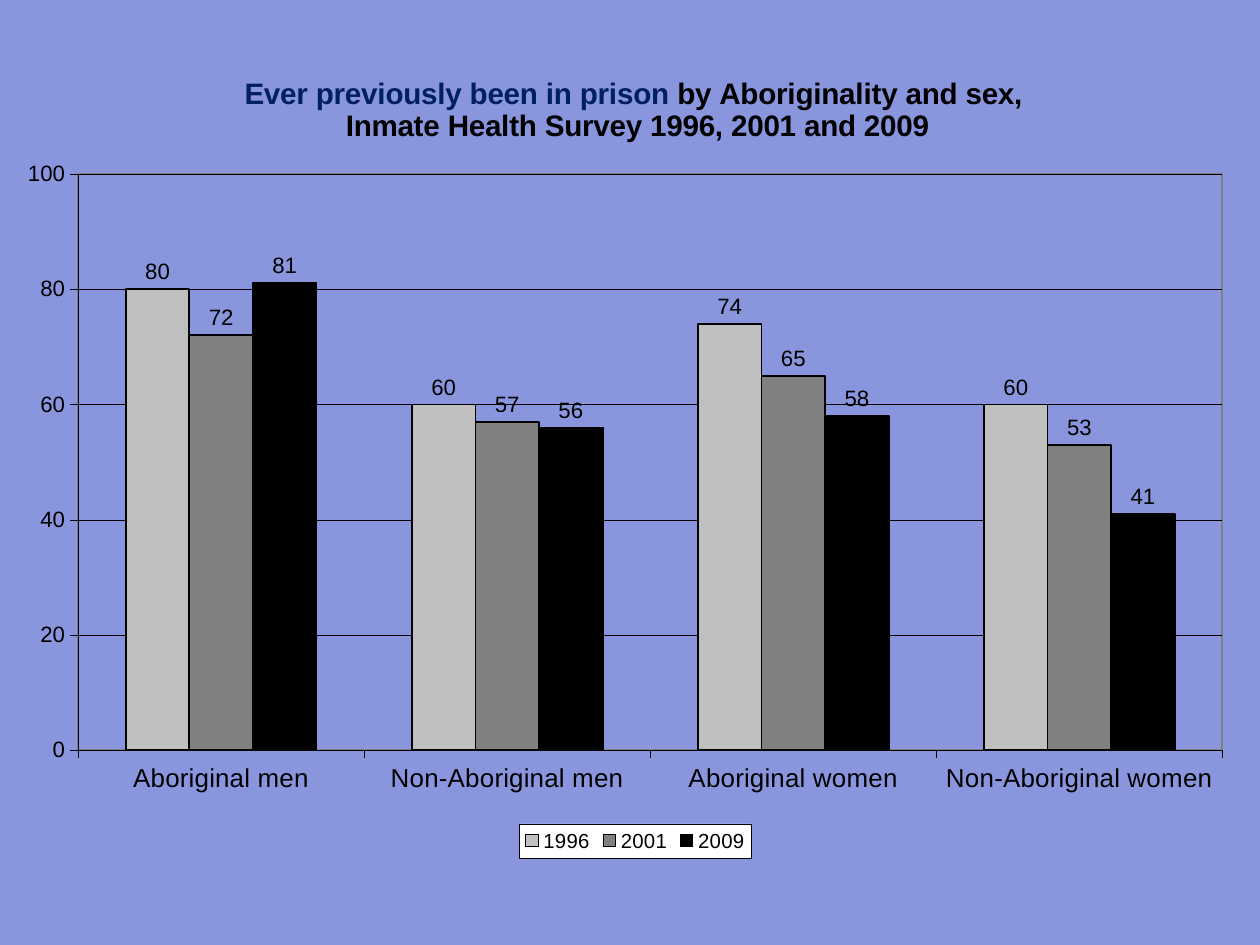
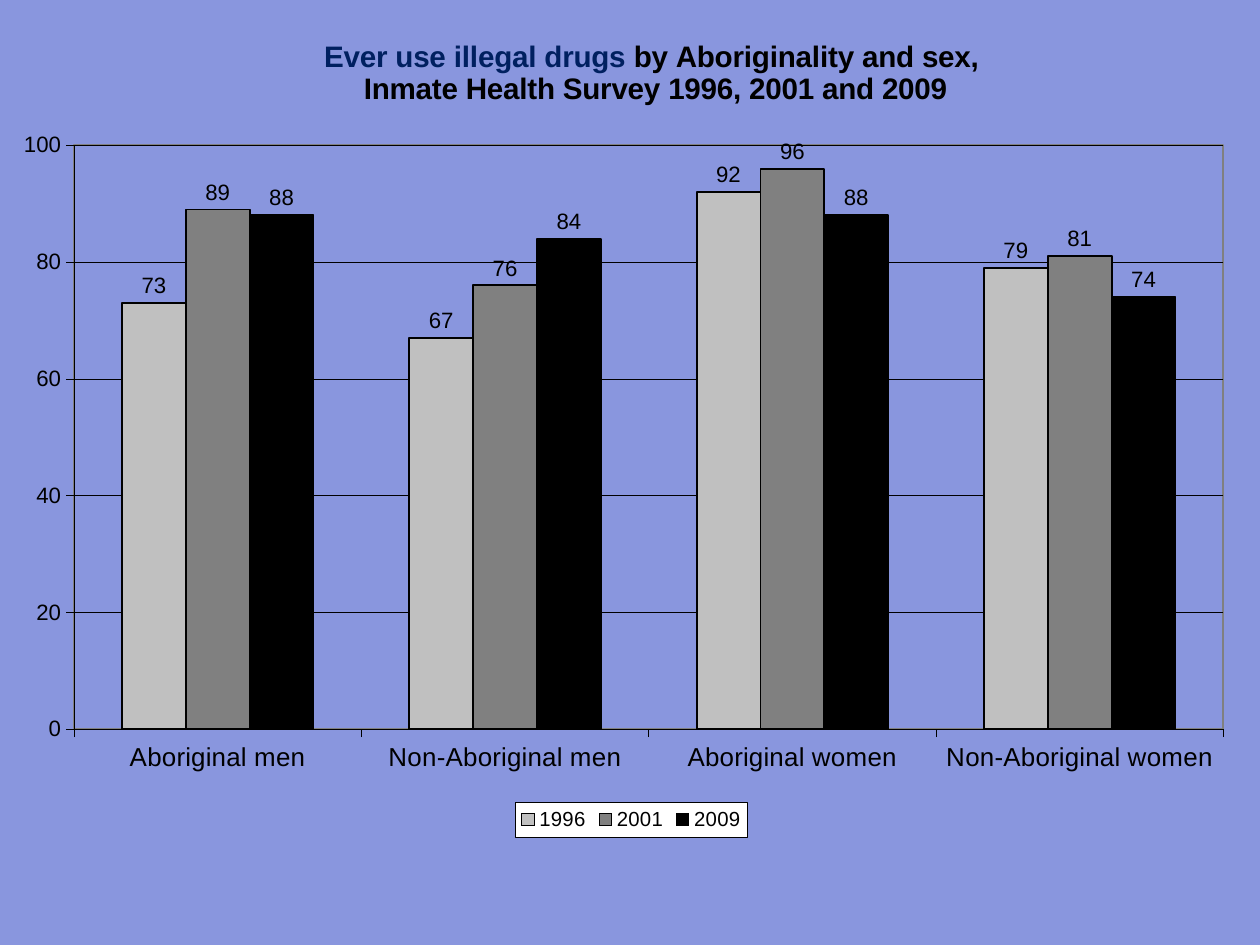
from lxml import etree
from pptx import Presentation
from pptx.chart.data import CategoryChartData
from pptx.dml.color import RGBColor
from pptx.enum.chart import XL_CHART_TYPE, XL_LABEL_POSITION, XL_LEGEND_POSITION, XL_TICK_MARK
from pptx.oxml import parse_xml
from pptx.oxml.ns import nsdecls, qn
from pptx.util import Inches, Pt

COLUMN = XL_CHART_TYPE.COLUMN_CLUSTERED
OUT_END = XL_LABEL_POSITION.OUTSIDE_END
BOTTOM = XL_LEGEND_POSITION.BOTTOM
TICK_OUT, TICK_NONE = XL_TICK_MARK.OUTSIDE, XL_TICK_MARK.NONE


class Theme:
    font = "Arial"
    back, ink, topic = "8996DE", "000000", "002060"
    frame, paper = "808080", "FFFFFF"
    bars = ["C0C0C0", "808080", "000000"]
    title, group, label, key = 16, 14, 12, 11
    thin, edge = 0.25, 1


def style(font, size, color=Theme.ink, bold=False):
    font.name, font.size, font.bold = Theme.font, Pt(size), bold
    font.color.rgb = RGBColor.from_string(color)


def place(prev, x, y, w=None, h=None, inner=False):
    """Put a manual layout, in percent of the chart, right after prev."""
    layout = parse_xml(f"<c:layout {nsdecls('c')}><c:manualLayout/></c:layout>")
    rows = [("layoutTarget", "inner")] if inner else []
    rows += [("xMode", "edge"), ("yMode", "edge")]
    rows += [(k, f"{v / 100:.4f}") for k, v in zip("xywh", (x, y, w, h)) if v is not None]
    for tag, val in rows:
        etree.SubElement(layout[0], qn("c:" + tag)).set("val", val)
    prev.addnext(layout)


years = ["1996", "2001", "2009"]
groups = ["Aboriginal men", "Non-Aboriginal men", "Aboriginal women", "Non-Aboriginal women"]
tail = " by Aboriginality and sex, "
survey = "Inmate Health Survey 1996, 2001 and 2009"

# Frames are percent of the slide; head and plot are percent of the chart
pages = [
    dict(topic="Ever previously been in prison", frame=(0.85, 4.51, 99.15, 86.32),
         head=(18.4, 3.5), plot=(5.4, 16.1, 91.6, 70.7),
         vals=[(80, 60, 74, 60), (72, 57, 65, 53), (81, 56, 58, 41)]),
    dict(topic="Ever use illegal drugs", frame=(0.53, 1.13, 99.15, 87.45),
         head=(25.1, 2.9), plot=(5.4, 16.3, 92, 70.7),
         vals=[(73, 67, 92, 79), (89, 76, 96, 81), (88, 84, 88, 74)]),
]

deck = Presentation()
deck.slide_width, deck.slide_height = Inches(9.45), Inches(7.09)
wide, high = deck.slide_width, deck.slide_height

for page in pages:
    slide = deck.slides.add_slide(deck.slide_layouts[6])
    slide.background.fill.solid()
    slide.background.fill.fore_color.rgb = RGBColor.from_string(Theme.back)

    # Chart and its data
    data = CategoryChartData()
    data.categories = groups
    for year, vals in zip(years, page["vals"]):
        data.add_series(year, vals)
    left, top, width, height = page["frame"]
    spot = [int(s * v / 100) for s, v in
            ((wide, left), (high, top), (wide, width), (high, height))]
    chart = slide.shapes.add_chart(COLUMN, *spot, data).chart
    style(chart.font, Theme.label)

    # Title: topic in blue, the rest in black
    chart.has_title = True
    frame = chart.chart_title.text_frame
    frame.text = page["topic"]
    first = frame.paragraphs[0]
    first.add_run().text = tail
    second = frame.add_paragraph()
    second.text = survey
    for run in first.runs + second.runs:
        style(run.font, Theme.title, bold=True)
    first.runs[0].font.color.rgb = RGBColor.from_string(Theme.topic)
    chart.chart_title.include_in_layout = False
    head = chart.chart_title._element
    for old in head.findall(qn("c:layout")):
        head.remove(old)
    place(head.find(qn("c:tx")), *page["head"])

    # Columns and value labels
    plot = chart.plots[0]
    plot.gap_width, plot.overlap, plot.vary_by_categories = 150, 0, False
    for bar, color in zip(plot.series, Theme.bars):
        bar.format.fill.solid()
        bar.format.fill.fore_color.rgb = RGBColor.from_string(color)
        bar.format.line.color.rgb = RGBColor.from_string(Theme.ink)
        bar.format.line.width = Pt(Theme.edge)
        tags = bar.data_labels
        tags.show_value, tags.position = True, OUT_END
        style(tags.font, Theme.label)

    # Axes and grid
    cat, val = chart.category_axis, chart.value_axis
    val.minimum_scale, val.maximum_scale, val.major_unit = 0, 100, 20
    val.has_major_gridlines = True
    for axis, size in ((cat, Theme.group), (val, Theme.label)):
        axis.major_tick_mark, axis.minor_tick_mark = TICK_OUT, TICK_NONE
        style(axis.tick_labels.font, size)
    for line in (cat.format.line, val.format.line, val.major_gridlines.format.line):
        line.color.rgb = RGBColor.from_string(Theme.ink)
        line.width = Pt(Theme.thin)

    # Legend
    chart.has_legend = True
    key = chart.legend
    key.position, key.include_in_layout = BOTTOM, False
    style(key.font, Theme.key)
    box = key._element
    for old in box.findall(qn("c:layout")):
        box.remove(old)
    place(box.find(qn("c:legendPos")), 40.7, 95.8, 18.6, 4.2)

    # Plot area place
    area = chart._chartSpace.chart.plotArea
    for old in area.findall(qn("c:layout")):
        area.remove(old)
    place(area[0], *page["plot"], inner=True)
    area.insert(0, area[1])

    # Legend box and plot frame
    clear = "<a:noFill/>"
    solid = f'<a:solidFill><a:srgbClr val="{Theme.paper}"/></a:solidFill>'
    for prev, fill, color, size in (
            (box.find(qn("c:overlay")), solid, Theme.ink, Theme.thin),
            (area[-1], clear, Theme.frame, Theme.edge)):
        prev.addnext(parse_xml(
            f'<c:spPr {nsdecls("c", "a")}>{fill}<a:ln w="{Pt(size)}"><a:solidFill>'
            f'<a:srgbClr val="{color}"/></a:solidFill></a:ln></c:spPr>'))

deck.save("out.pptx")
